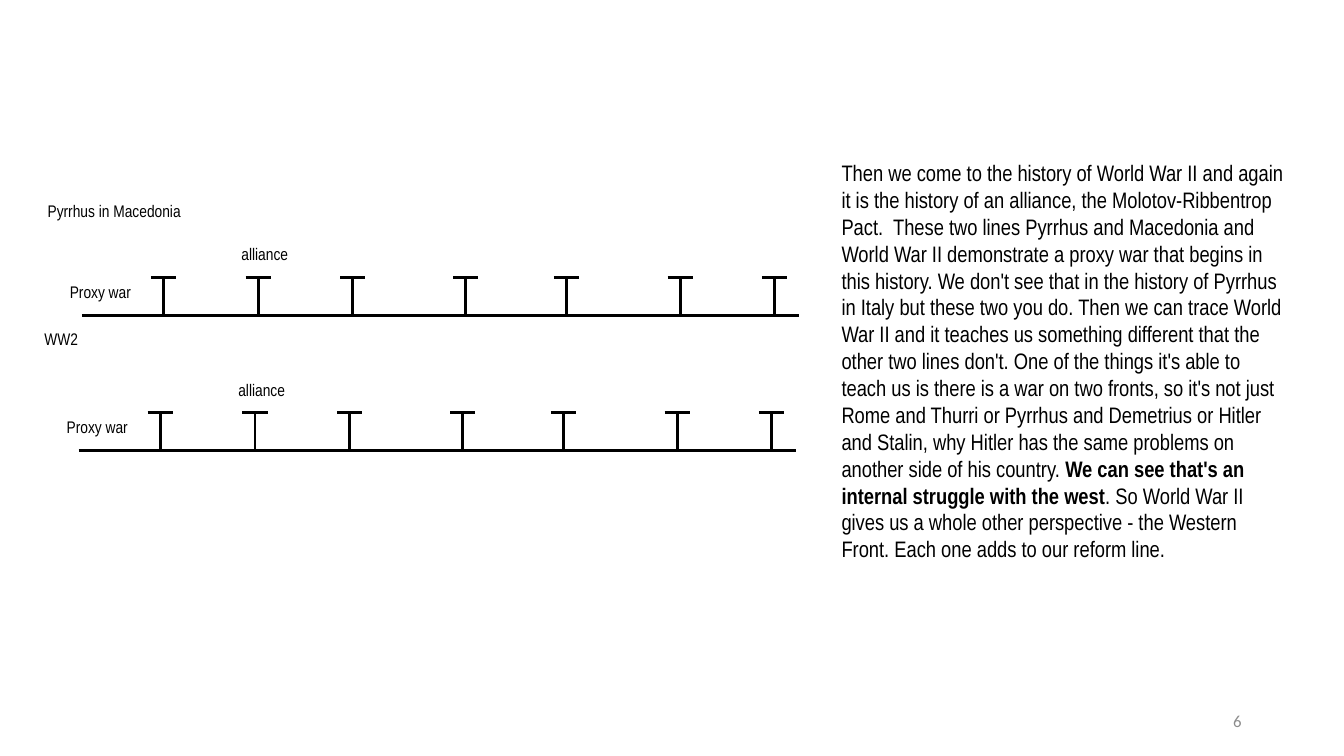
from dataclasses import dataclass

from lxml.etree import SubElement
from pptx import Presentation
from pptx.dml.color import RGBColor
from pptx.enum.shapes import MSO_CONNECTOR
from pptx.enum.text import MSO_ANCHOR, PP_ALIGN
from pptx.oxml.ns import qn
from pptx.shapes.shapetree import GroupShapes, SlideShapes
from pptx.util import Pt

BLACK = "000000"
GREY = "8C8C8C"
STEM_OFFSETS = (58.3, 126, 193.6, 274.3, 346.3, 427.5, 494.8)
AXIS_LENGTH = 512.6
STEM_HEIGHT = 27
CROSSBAR_HALF = 9
LABEL_HEIGHT = 25.2


@dataclass
class Timeline:
    title: str
    left: float
    axis_y: float
    title_top: float
    title_width: float


@dataclass
class Span:
    text: str
    bold: bool = False


@dataclass
class TextStyle:
    size: float = 12
    font: str = "Arial Narrow"
    colour: str = BLACK
    align: PP_ALIGN = PP_ALIGN.LEFT
    anchor: MSO_ANCHOR = MSO_ANCHOR.TOP
    inset_x: float = 3
    inset_y: float = 3


TIMELINES = [
    Timeline("WW2", 56.2, 321.9, 231.8, 76.3),
    Timeline("Pyrrhus in Macedonia", 58.4, 225.4, 140.4, 135.4),
]

BODY = [
    Span(
        "Then we come to the history of World War II and again it is the history "
        "of an alliance, the Molotov-Ribbentrop Pact.  These two lines Pyrrhus and "
        "Macedonia and World War II demonstrate a proxy war that begins in this "
        "history. We don't see that in the history of Pyrrhus in Italy but these "
        "two you do. Then we can trace World War II and it teaches us something "
        "different that the other two lines don't. One of the things it's able to "
        "teach us is there is a war on two fronts, so it's not just Rome and Thurri "
        "or Pyrrhus and Demetrius or Hitler and Stalin, why Hitler has the same "
        "problems on another side of his country. "
    ),
    Span("We can see that's an internal struggle with the west", bold=True),
    Span(
        ". So World War II gives us a whole other perspective - the Western Front. "
        "Each one adds to our reform line."
    ),
]

LABEL = TextStyle()
CENTRED_LABEL = TextStyle(align=PP_ALIGN.CENTER)
BODY_STYLE = TextStyle(size=16, inset_x=7.2, inset_y=3.6)
NUMBER_STYLE = TextStyle(font="Calibri", colour=GREY, align=PP_ALIGN.RIGHT,
                         anchor=MSO_ANCHOR.MIDDLE, inset_x=7.2, inset_y=3.6)


def colour(value: str) -> RGBColor:
    return RGBColor.from_string(value)


def add_text(shapes: SlideShapes | GroupShapes, spans: list[Span], left: float,
             top: float, width: float, height: float, style: TextStyle) -> None:
    box = shapes.add_textbox(Pt(left), Pt(top), Pt(width), Pt(height))
    frame_format = {
        "word_wrap": True,
        "vertical_anchor": style.anchor,
        "margin_left": Pt(style.inset_x),
        "margin_right": Pt(style.inset_x),
        "margin_top": Pt(style.inset_y),
        "margin_bottom": Pt(style.inset_y),
    }
    for name, value in frame_format.items():
        setattr(box.text_frame, name, value)
    para = box.text_frame.paragraphs[0]
    para.alignment = style.align
    for span in spans:
        run = para.add_run()
        run.text = span.text
        font_format = {"size": Pt(style.size), "name": style.font, "bold": span.bold}
        for name, value in font_format.items():
            setattr(run.font, name, value)
        run.font.color.rgb = colour(style.colour)


def add_line(shapes: GroupShapes, x1: float, y1: float, x2: float, y2: float) -> None:
    line = shapes.add_connector(MSO_CONNECTOR.STRAIGHT, Pt(x1), Pt(y1), Pt(x2), Pt(y2))
    line.line.width = Pt(2)
    line.line.color.rgb = colour(BLACK)
    SubElement(line._element.spPr, qn("a:effectLst"))


def add_timeline(page_shapes: SlideShapes, timeline: Timeline) -> None:
    shapes = page_shapes.add_group_shape().shapes
    left, axis_y = timeline.left, timeline.axis_y
    stem_top = axis_y - STEM_HEIGHT

    # Axis with its T-shaped markers
    add_line(shapes, left, axis_y, left + AXIS_LENGTH, axis_y)
    for offset in STEM_OFFSETS:
        x = left + offset
        add_line(shapes, x, stem_top, x, axis_y)
        add_line(shapes, x - CROSSBAR_HALF, stem_top, x + CROSSBAR_HALF, stem_top)

    # Title and labels
    add_text(shapes, [Span(timeline.title)], left - 27.4, timeline.title_top,
             timeline.title_width, LABEL_HEIGHT, LABEL)
    add_text(shapes, [Span("alliance")], left + 103.7, axis_y - 54,
             54, LABEL_HEIGHT, CENTRED_LABEL)
    add_text(shapes, [Span("Proxy war")], left - 13.7, stem_top,
             54, LABEL_HEIGHT, CENTRED_LABEL)


def main() -> None:
    deck = Presentation()
    deck.slide_width, deck.slide_height = Pt(960), Pt(540)
    page = deck.slides.add_slide(deck.slide_layouts[6])

    # Slide number
    add_text(page.shapes, [Span("6")], 678, 500.5, 216, 28.8, NUMBER_STYLE)

    # Timelines on the left
    for timeline in TIMELINES:
        add_timeline(page.shapes, timeline)

    # Commentary on the right
    add_text(page.shapes, BODY, 594, 110.2, 330.5, 319.7, BODY_STYLE)

    deck.save("out.pptx")


if __name__ == "__main__":
    main()
